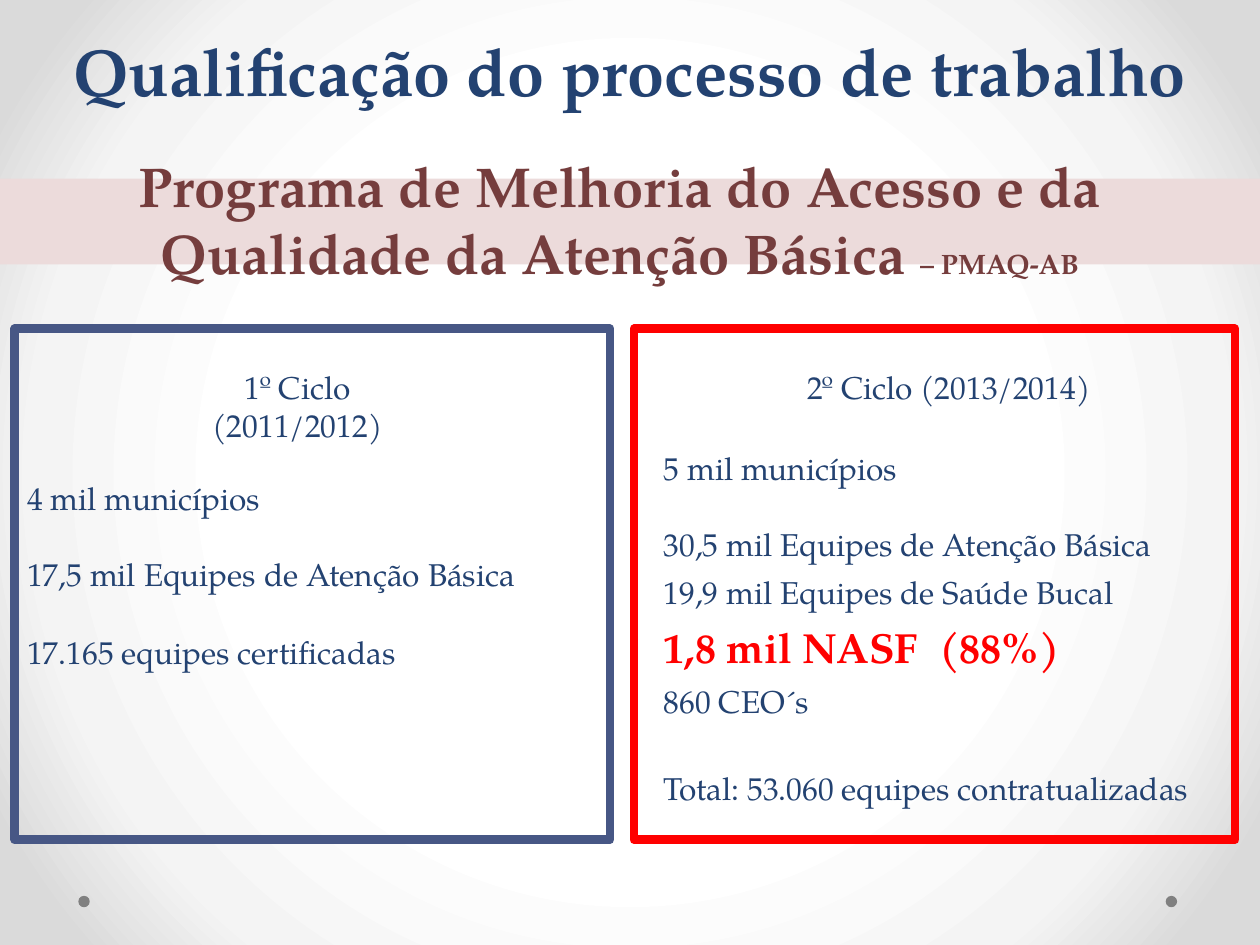
from dataclasses import dataclass

from pptx import Presentation
from pptx.dml.color import RGBColor
from pptx.enum.shapes import MSO_SHAPE
from pptx.enum.text import MSO_ANCHOR, MSO_AUTO_SIZE, PP_ALIGN
from pptx.oxml import parse_xml
from pptx.oxml.ns import nsdecls
from pptx.util import Cm, Pt

RECT, OVAL = MSO_SHAPE.RECTANGLE, MSO_SHAPE.OVAL
LEFT, CENTER = PP_ALIGN.LEFT, PP_ALIGN.CENTER
BOTTOM = MSO_ANCHOR.BOTTOM
FIXED = MSO_AUTO_SIZE.NONE


@dataclass(frozen=True)
class Theme:
    font: str = "TeX Gyre Pagella"
    navy: str = "234271"
    frame: str = "475785"
    red: str = "FF0000"
    wine: str = "753D3D"
    band: str = "ECDBDB"
    dot: str = "808080"
    glow: tuple = ((50, "FFFFFF"), (76, "F4F4F4"), (92, "DADADA"))
    title: int = 38
    head: int = 32
    big: int = 24
    body: int = 18
    small: int = 16


THEME = Theme()


def place(shape, box):
    shape.left, shape.top, shape.width, shape.height = map(Cm, box)


def style(font, size, color, bold=False):
    font.name = THEME.font
    font.size = Pt(size)
    font.bold = bold
    font.color.rgb = RGBColor.from_string(color)


def paint(slide):
    stops = "".join(
        f'<a:gs pos="{pos * 1000}"><a:srgbClr val="{color}"/></a:gs>'
        for pos, color in THEME.glow
    )
    back = parse_xml(
        f'<p:bg {nsdecls("p", "a")}><p:bgPr><a:gradFill rotWithShape="1">'
        f'<a:gsLst>{stops}</a:gsLst><a:path path="circle">'
        '<a:fillToRect l="50000" t="50000" r="50000" b="50000"/></a:path>'
        "</a:gradFill><a:effectLst/></p:bgPr></p:bg>"
    )
    slide.element.cSld.insert(0, back)


def add_fill(slide, kind, box, color):
    shape = slide.shapes.add_shape(kind, *map(Cm, box))
    shape.shadow.inherit = False
    shape.fill.solid()
    shape.fill.fore_color.rgb = RGBColor.from_string(color)
    shape.line.fill.background()


def add_frame(slide, box, color):
    shape = slide.shapes.add_shape(RECT, *map(Cm, box))
    shape.shadow.inherit = False
    shape.fill.background()
    shape.line.color.rgb = RGBColor.from_string(color)
    shape.line.width = Pt(5)


def add_text(slide, box, lines, align=LEFT, size=THEME.body,
             color=THEME.navy, bold=False):
    frame = slide.shapes.add_textbox(*map(Cm, box)).text_frame
    frame.word_wrap = True
    frame.text = "\n".join(text for text, gap in lines)
    for para, (text, gap) in zip(frame.paragraphs, lines):
        para.alignment = align
        para.space_after = Pt(gap)
        style(para.font, size, color, bold)
    return frame.paragraphs


def add_title(slide, text):
    title = slide.shapes.title
    place(title, (0, 0, 25.4, 2.34))
    frame = title.text_frame
    frame.text = text
    frame.auto_size = FIXED
    frame.vertical_anchor = BOTTOM
    para = frame.paragraphs[0]
    para.alignment = CENTER
    para.line_spacing = Pt(58)
    style(para.font, THEME.title, THEME.navy, True)


def add_head(slide):
    add_fill(slide, RECT, (0, 3.6, 25.4, 1.73), THEME.band)
    text = "Programa de Melhoria do Acesso e da Qualidade da Atenção Básica "
    para = add_text(slide, (0.3, 2.92, 24.4, 3), [(text, 0)], CENTER,
                    THEME.head, THEME.wine, True)[0]
    run = para.add_run()
    run.text = "– PMAQ-AB"
    run.font.size = Pt(THEME.small)


def add_cycle(slide, frame, color, label, name, body, lines):
    add_frame(slide, frame, color)
    add_text(slide, label, [(name, 0)], CENTER)
    return add_text(slide, body, lines)


def main():
    deck = Presentation()
    deck.slide_width, deck.slide_height = Cm(25.4), Cm(19.05)
    slide = deck.slides.add_slide(deck.slide_layouts[5])
    paint(slide)
    for left in (1.58, 23.5):
        add_fill(slide, OVAL, (left, 18.06, 0.23, 0.23), THEME.dot)
    add_title(slide, "Qualificação do processo de trabalho")
    add_head(slide)
    add_cycle(
        slide, (0.3, 6.63, 12, 10.3), THEME.frame,
        (3.2, 7.29, 5.6, 1.8), "1º Ciclo (2011/2012)",
        (0.3, 9.53, 12, 6.2),
        [("4 mil municípios", 22),
         ("17,5 mil Equipes de Atenção Básica", 23),
         ("17.165 equipes certificadas", 0)],
    )
    lines = add_cycle(
        slide, (12.78, 6.63, 12.12, 10.3), THEME.red,
        (14.1, 7.29, 10.06, 1.02), "2º Ciclo (2013/2014)",
        (13.13, 8.92, 11.58, 9.2),
        [("5 mil municípios", 22),
         ("30,5 mil Equipes de Atenção Básica", 6),
         ("19,9 mil Equipes de Saúde Bucal", 6),
         ("1,8 mil NASF  (88%)", 6),
         ("860 CEO´s", 28),
         ("Total: 53.060 equipes contratualizadas", 0)],
    )
    style(lines[3].font, THEME.big, THEME.red, True)
    deck.save("out.pptx")


if __name__ == "__main__":
    main()
